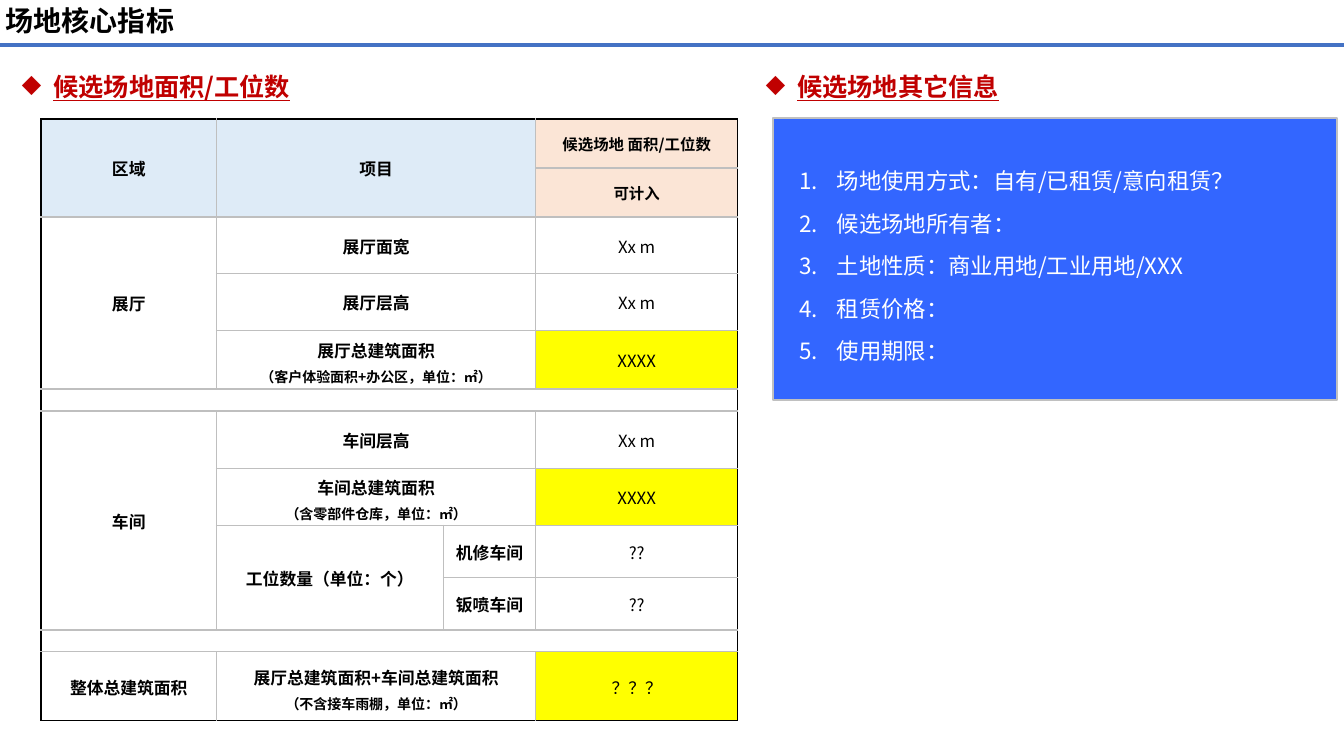
import pptx
import pptx.util
import pptx.dml.color
import pptx.enum.shapes
import pptx.enum.text
import pptx.oxml.ns
import lxml.etree

Pt = pptx.util.Pt
ALIGN = pptx.enum.text.PP_ALIGN
ANCHOR = pptx.enum.text.MSO_ANCHOR
FONT = "Noto Sans CJK SC"
BLACK, GREY, RED, WHITE = "000000", "BFBFBF", "C00000", "FFFFFF"
BLUE_HEAD, ORANGE_HEAD, YELLOW = "DEEBF7", "FBE5D6", "FFFF00"

COL_WIDTHS = [125.4, 162, 66, 144.3]
ROW_HEIGHTS = [35, 35, 40.5, 40.5, 42, 15.7, 40.8, 40.8, 37.4, 37.4, 15.7, 49.2]
# row, column, row span, column span, lines, fill
LABELS = [
    (0, 0, 2, 1, ["区域"], BLUE_HEAD),
    (0, 1, 2, 2, ["项目"], BLUE_HEAD),
    (2, 0, 3, 1, ["展厅"], None),
    (2, 1, 1, 2, ["展厅面宽"], None),
    (3, 1, 1, 2, ["展厅层高"], None),
    (4, 1, 1, 2, ["展厅总建筑面积", "（客户体验面积+办公区，单位：㎡）"], None),
    (5, 0, 1, 4, [], None),
    (6, 0, 4, 1, ["车间"], None),
    (6, 1, 1, 2, ["车间层高"], None),
    (7, 1, 1, 2, ["车间总建筑面积", "（含零部件仓库，单位：㎡）"], None),
    (8, 1, 2, 1, ["工位数量（单位：个）"], None),
    (8, 2, 1, 1, ["机修车间"], None),
    (9, 2, 1, 1, ["钣喷车间"], None),
    (10, 0, 1, 4, [], None),
    (11, 0, 1, 1, ["整体总建筑面积"], None),
    (11, 1, 1, 2, ["展厅总建筑面积+车间总建筑面积", "（不含接车雨棚，单位：㎡）"], None),
]
HEADS = {0: "候选场地 面积/工位数", 1: "可计入"}
VALUES = {2: "Xx m", 3: "Xx m", 4: "XXXX", 6: "Xx m", 7: "XXXX",
          8: "??", 9: "??", 11: "？？？"}
TOTAL_ROWS = (4, 7, 11)
SITE_INFO = ["场地使用方式：自有/已租赁/意向租赁？", "候选场地所有者：",
             "土地性质：商业用地/工业用地/XXX", "租赁价格：", "使用期限："]


def rgb(color):
    return pptx.dml.color.RGBColor.from_string(color)


def add_xml(parent, tag, **attrs):
    return lxml.etree.SubElement(parent, pptx.oxml.ns.qn(tag), attrs)


def style(p, size, color, bold=False, underline=False):
    for r in p.runs:
        r.font.size = Pt(size)
        r.font.name = FONT
        r.font.bold = bold
        r.font.color.rgb = rgb(color)
        if underline:
            r.font.underline = True
        add_xml(r.font._element, "a:ea", typeface=FONT)


def add_bullet(p, left, hanging, tag, **attrs):
    pPr = p._p.get_or_add_pPr()
    pPr.set("marL", str(Pt(left)))
    pPr.set("indent", str(-Pt(hanging)))
    add_xml(pPr, tag, **attrs)


def add_text(s, left, top, width, height, text):
    tf = s.shapes.add_textbox(Pt(left), Pt(top), Pt(width), Pt(height)).text_frame
    tf.word_wrap = True
    tf.text = text
    return tf


def add_title(s, text):
    tf = add_text(s, -2.9, 0, 962.6, 31.7, text)
    tf.vertical_anchor = ANCHOR.MIDDLE
    tf.paragraphs[0].line_spacing = 0.9
    style(tf.paragraphs[0], 20, BLACK, bold=True)


def add_heading(s, left, text):
    p = add_text(s, left, 36.7, 306.7, 36, text).paragraphs[0]
    add_bullet(p, 22.5, 22.5, "a:buChar", char="◆")
    p.line_spacing = 1.5
    style(p, 18, RED, bold=True, underline=True)


def add_rule(s, y, width):
    line = s.shapes.add_connector(pptx.enum.shapes.MSO_CONNECTOR.STRAIGHT,
                                  0, Pt(y), Pt(width), Pt(y))
    line.line.color.rgb = rgb("4472C4")
    line.line.width = Pt(3)
    add_xml(line._element.spPr, "a:effectLst")


def set_borders(cell, colors):
    tcPr = cell._tc.get_or_add_tcPr()
    for i, (side, color) in enumerate(colors.items()):
        ln = lxml.etree.Element(pptx.oxml.ns.qn("a:" + side), w=str(Pt(1)))
        add_xml(add_xml(ln, "a:solidFill"), "a:srgbClr", val=color)
        tcPr.insert(i, ln)


def fill_cell(table, row, col, rows, cols, lines, fill, size=12, bold=True):
    cell = table.cell(row, col)
    if rows * cols > 1:
        cell.merge(table.cell(row + rows - 1, col + cols - 1))
    cell.vertical_anchor = ANCHOR.MIDDLE
    cell.margin_left = cell.margin_right = cell.margin_top = Pt(0.7)
    cell.margin_bottom = 0
    if fill:
        cell.fill.solid()
        cell.fill.fore_color.rgb = rgb(fill)
    else:
        cell.fill.background()
    # Black around the table, grey inside
    set_borders(cell, {
        "lnL": BLACK if col == 0 else GREY,
        "lnR": BLACK if col + cols == len(COL_WIDTHS) else GREY,
        "lnT": BLACK if row == 0 else GREY,
        "lnB": BLACK if row + rows == len(ROW_HEIGHTS) else GREY})
    tf = cell.text_frame
    if not lines:
        add_xml(tf.paragraphs[0]._p, "a:endParaRPr", sz="600")
        return
    tf.text = "\n".join(lines)
    for i, p in enumerate(tf.paragraphs):
        p.alignment = ALIGN.CENTER
        if len(lines) > 1:
            p.line_spacing = 1.2
        style(p, 10 if i else size, BLACK, bold)


def add_area_table(s, left, top):
    table = s.shapes.add_table(len(ROW_HEIGHTS), len(COL_WIDTHS), Pt(left), Pt(top),
                               Pt(sum(COL_WIDTHS)), Pt(sum(ROW_HEIGHTS))).table
    table.first_row = table.horz_banding = False
    for column, width in zip(table.columns, COL_WIDTHS):
        column.width = Pt(width)
    for row, height in zip(table.rows, ROW_HEIGHTS):
        row.height = Pt(height)
    for label in LABELS:
        fill_cell(table, *label)
    for row, text in HEADS.items():
        fill_cell(table, row, 3, 1, 1, [text], ORANGE_HEAD, size=11)
    for row, text in VALUES.items():
        fill = YELLOW if row in TOTAL_ROWS else None
        fill_cell(table, row, 3, 1, 1, [text], fill, bold=False)


def add_info_panel(s, left, top, width, height, items):
    sp = s.shapes.add_shape(pptx.enum.shapes.MSO_SHAPE.RECTANGLE,
                            Pt(left), Pt(top), Pt(width), Pt(height))
    sp.shadow.inherit = False
    sp.fill.solid()
    sp.fill.fore_color.rgb = rgb("3366FF")
    sp.line.color.rgb = rgb("C0C0C0")
    sp.line.width = Pt(1.5)
    tf = sp.text_frame
    tf.word_wrap = False
    tf.vertical_anchor = ANCHOR.MIDDLE
    tf.text = "\n".join(items)
    for i, p in enumerate(tf.paragraphs):
        add_bullet(p, 38.5, 27, "a:buAutoNum", type="arabicPeriod")
        p.alignment = ALIGN.LEFT
        p.line_spacing = 1.5
        p.space_before = Pt(0.8 if i else 0)
        p.space_after = Pt(0.8)
        style(p, 16, WHITE)


def main():
    prs = pptx.Presentation()
    prs.slide_width, prs.slide_height = Pt(960), Pt(540)
    s = prs.slides.add_slide(prs.slide_layouts[6])

    # Title band
    add_rule(s, 31.9, 960)
    add_title(s, "场地核心指标")

    # Areas and work bays
    add_heading(s, 8.6, "候选场地面积/工位数")
    add_area_table(s, 29.3, 85)

    # Other site information
    add_heading(s, 540, "候选场地其它信息")
    add_info_panel(s, 552.3, 84.3, 402.7, 201.6, SITE_INFO)

    prs.save("out.pptx")


if __name__ == "__main__":
    main()
